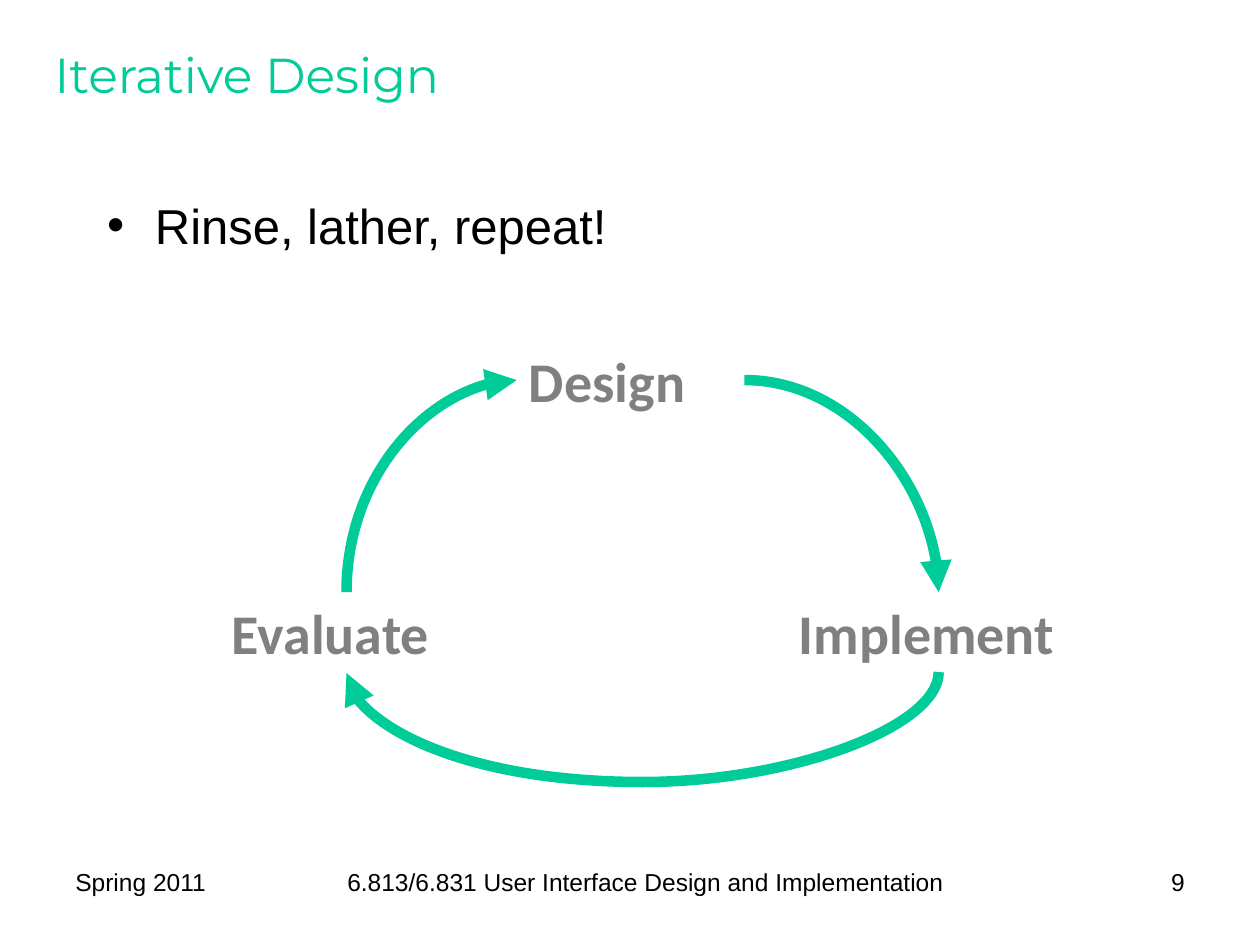
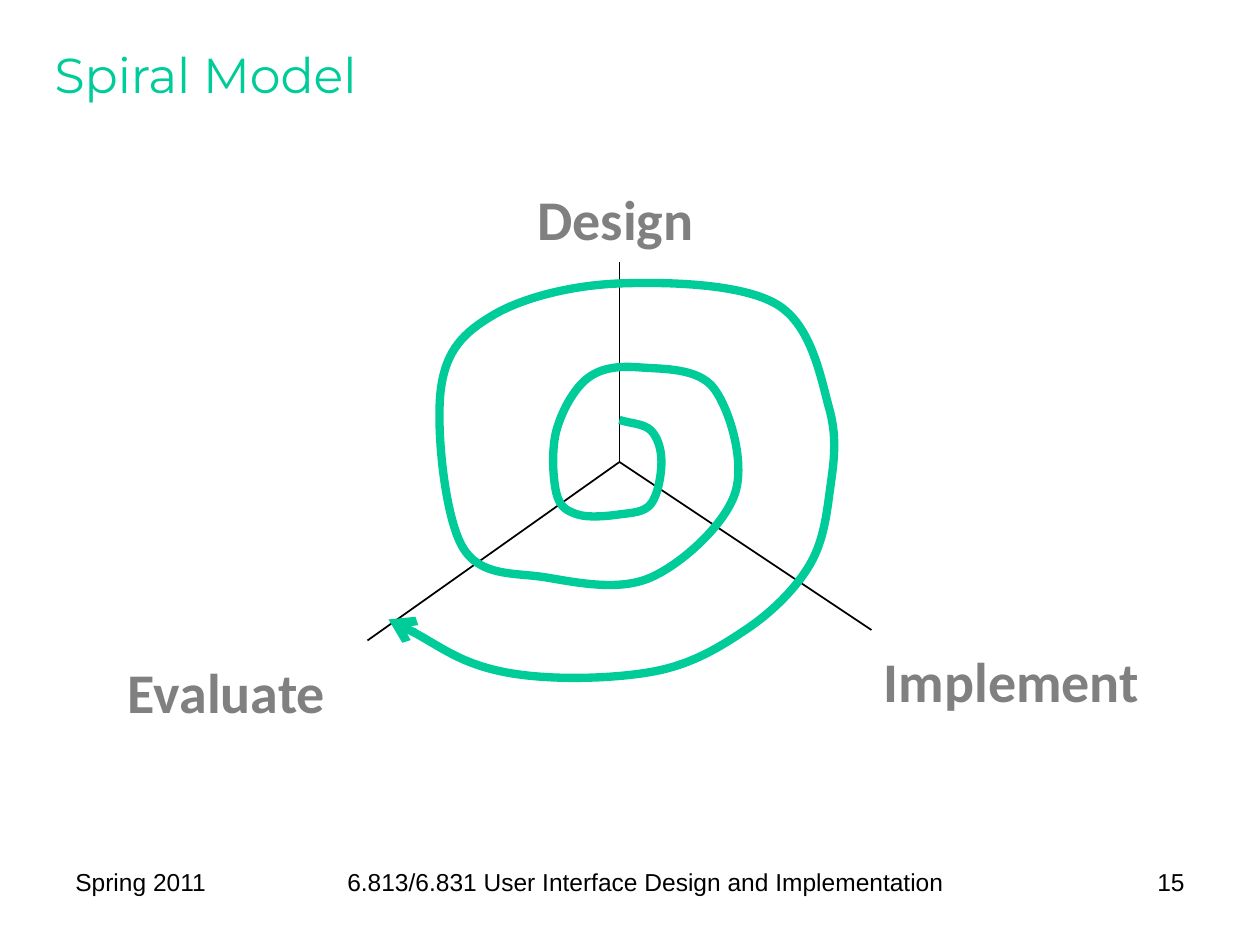
from dataclasses import dataclass

from lxml.etree import SubElement
from pptx import Presentation
from pptx.dml.color import RGBColor
from pptx.enum.shapes import MSO_CONNECTOR
from pptx.enum.text import MSO_ANCHOR, MSO_AUTO_SIZE, PP_ALIGN
from pptx.oxml.ns import qn
from pptx.util import Inches, Pt

LEFT, MID, RIGHT = PP_ALIGN.LEFT, PP_ALIGN.CENTER, PP_ALIGN.RIGHT
CURVE, LINE = MSO_CONNECTOR.CURVE, MSO_CONNECTOR.STRAIGHT
GREEN = RGBColor(0x00, 0xCC, 0x99)
GRAY = RGBColor(0x80, 0x80, 0x80)
BLACK = RGBColor(0x00, 0x00, 0x00)
WIDE, HIGH = Inches(10), Inches(7.5)
COLS, ROWS = 120, 90
FULL, HALF = 1, 5


@dataclass(frozen=True)
class Box:
    col: float
    row: float
    cols: float
    rows: float


@dataclass(frozen=True)
class Font:
    name: str
    size: int
    color: RGBColor
    bold: bool = False


@dataclass(frozen=True)
class Label:
    text: str
    cols: float


@dataclass(frozen=True)
class Arc:
    start: tuple
    end: tuple
    form: str
    turn: int = 0
    bend: int = 0


HEAD = Font("Montserrat", 28, GREEN)
BODY = Font("Arial", 28, BLACK)
FOOT = Font("Arial", 14, BLACK)
STEP = Font("Calibri", 32, GRAY, True)

STEPS = (Label("Design", 21.6), Label("Implement", 29), Label("Evaluate", 24.4))
CYCLE = ((49.2, 32.4), (74.9, 56.4), (20.9, 56.4))
RIM = ((50, 17), (83, 61), (11, 62))
ARCS = (
    Arc((33, 56.4), (49.2, 36.2), "curvedConnector2", 270),
    Arc((70.9, 36.2), (89.4, 56.4), "curvedConnector2"),
    Arc((89.4, 64), (33, 64.1), "curvedConnector3", 90, 10560000),
)
HUB = (59, 44)
TIPS = ((59, 25), (35, 61), (83, 60))
SPIRAL = (
    (59, 40), (62, 41), (63, 44), (62, 48), (59, 49), (55, 49), (53, 47),
    (53, 41), (56, 36), (61, 35), (68, 37), (70, 47), (62, 55), (52, 55),
    (44, 52), (42, 37), (47, 30), (59, 27), (74, 29), (79, 39), (79, 47),
    (77, 54), (71, 60), (62, 64), (48, 64), (37, 59),
)


def across(col: float) -> int:
    return round(WIDE * col / COLS)


def down(row: float) -> int:
    return round(HIGH * row / ROWS)


def place(shape, box: Box) -> None:
    shape.left, shape.top = across(box.col), down(box.row)
    shape.width, shape.height = across(box.cols), down(box.rows)


def write(shape, text: str, font: Font, align=LEFT):
    par = shape.text_frame.paragraphs[0]
    par.alignment = align
    run = par.add_run()
    run.text = text
    run.font.name, run.font.size = font.name, Pt(font.size)
    run.font.bold = font.bold
    run.font.color.rgb = font.color
    return par


def add_text(slide, box: Box, text: str, font: Font, align=LEFT):
    shape = slide.shapes.add_textbox(0, 0, 0, 0)
    place(shape, box)
    shape.text_frame.word_wrap = True
    write(shape, text, font, align)
    return shape


def add_base(deck, kind: int, title: str, number: int):
    slide = deck.slides.add_slide(deck.slide_layouts[kind])
    head = slide.shapes.title
    place(head, Box(4, 2, 111, 10))
    head.text_frame.vertical_anchor = MSO_ANCHOR.MIDDLE
    write(head, title, HEAD)
    course = "6.813/6.831 User Interface Design and Implementation"
    for col, cols, text, align in (
        (6, 18, "Spring 2011", LEFT),
        (25, 73, course, MID),
        (99, 15, str(number), RIGHT),
    ):
        add_text(slide, Box(col, 82, cols, 6.25), text, FOOT, align)
    return slide


def add_steps(slide, spots: tuple) -> None:
    for step, (col, row) in zip(STEPS, spots):
        shape = add_text(slide, Box(col, row, step.cols, 7.6), step.text, STEP)
        shape.text_frame.word_wrap = False
        shape.text_frame.auto_size = MSO_AUTO_SIZE.SHAPE_TO_FIT_TEXT


def stroke(shape, color: RGBColor, width: float, tip: str = "") -> None:
    shape.line.color.rgb = color
    shape.line.width = Pt(width)
    if tip:
        pen = shape._element.spPr.find(qn("a:ln"))
        SubElement(pen, qn("a:tailEnd"), type=tip)


def add_link(slide, kind, start: tuple, end: tuple):
    ends = [f(v) for spot in (start, end) for f, v in zip((across, down), spot)]
    link = slide.shapes.add_connector(kind, *ends)
    return link


def flatten(link) -> None:
    SubElement(link._element.spPr, qn("a:effectLst"))


def add_arc(slide, arc: Arc) -> None:
    (x1, y1), (x2, y2) = arc.start, arc.end
    wide, high = abs(x2 - x1), abs(y2 - y1)
    if arc.turn:
        wide, high = high, wide
    left, top = (x1 + x2 - wide) / 2, (y1 + y2 - high) / 2
    link = add_link(slide, CURVE, (left, top), (left + wide, top + high))
    props = link._element.spPr
    props.find(qn("a:xfrm")).set("rot", str(arc.turn * 60000))
    geom = props.find(qn("a:prstGeom"))
    geom.set("prst", arc.form)
    if arc.bend:
        SubElement(geom.find(qn("a:avLst")), qn("a:gd"),
                   name="adj1", fmla=f"val {arc.bend}")
    stroke(link, GREEN, 6, "triangle")
    flatten(link)


def smooth(shape) -> None:
    spots = list(shape._element.iter(qn("a:pt")))
    knots = [(int(p.get("x")), int(p.get("y"))) for p in spots]
    last = len(knots) - 1

    def lean(i: int) -> list:
        a, b = max(i - 1, 0), min(i + 1, last)
        return [(v - u) / (3 * (b - a)) for u, v in zip(knots[a], knots[b])]

    for i, line in enumerate(list(shape._element.iter(qn("a:lnTo")))):
        near = [k + d for k, d in zip(knots[i], lean(i))]
        far = [k - d for k, d in zip(knots[i + 1], lean(i + 1))]
        curve = line.getparent().makeelement(qn("a:cubicBezTo"))
        for x, y in (near, far, knots[i + 1]):
            SubElement(curve, qn("a:pt"), x=str(round(x)), y=str(round(y)))
        line.getparent().replace(line, curve)


def add_spiral(slide) -> None:
    first, *rest = [(across(x), down(y)) for x, y in SPIRAL]
    pen = slide.shapes.build_freeform(*first)
    pen.add_line_segments(rest, close=False)
    shape = pen.convert_to_shape()
    smooth(shape)
    shape.fill.background()
    shape.shadow.inherit = False
    stroke(shape, GREEN, 4.75, "arrow")


def add_cycle(deck) -> None:
    slide = add_base(deck, FULL, "Iterative Design", 9)
    body = slide.placeholders[1]
    place(body, Box(9, 18, 102, 62))
    par = write(body, "Rinse, lather, repeat!", BODY)
    par.space_before = Pt(5.6)
    props = par._p.get_or_add_pPr()
    props.set("marL", str(Inches(0.38)))
    props.set("indent", str(-Inches(0.38)))
    SubElement(props, qn("a:buFont"), typeface="Arial")
    SubElement(props, qn("a:buChar"), char="•")
    add_steps(slide, CYCLE)
    for arc in ARCS:
        add_arc(slide, arc)


def add_model(deck) -> None:
    slide = add_base(deck, HALF, "Spiral Model", 15)
    add_steps(slide, RIM)
    for tip in TIPS:
        link = add_link(slide, LINE, HUB, tip)
        stroke(link, BLACK, 1)
        flatten(link)
    add_spiral(slide)


def main() -> None:
    deck = Presentation()
    deck.slide_width, deck.slide_height = WIDE, HIGH
    add_cycle(deck)
    add_model(deck)
    deck.save("out.pptx")


if __name__ == "__main__":
    main()
